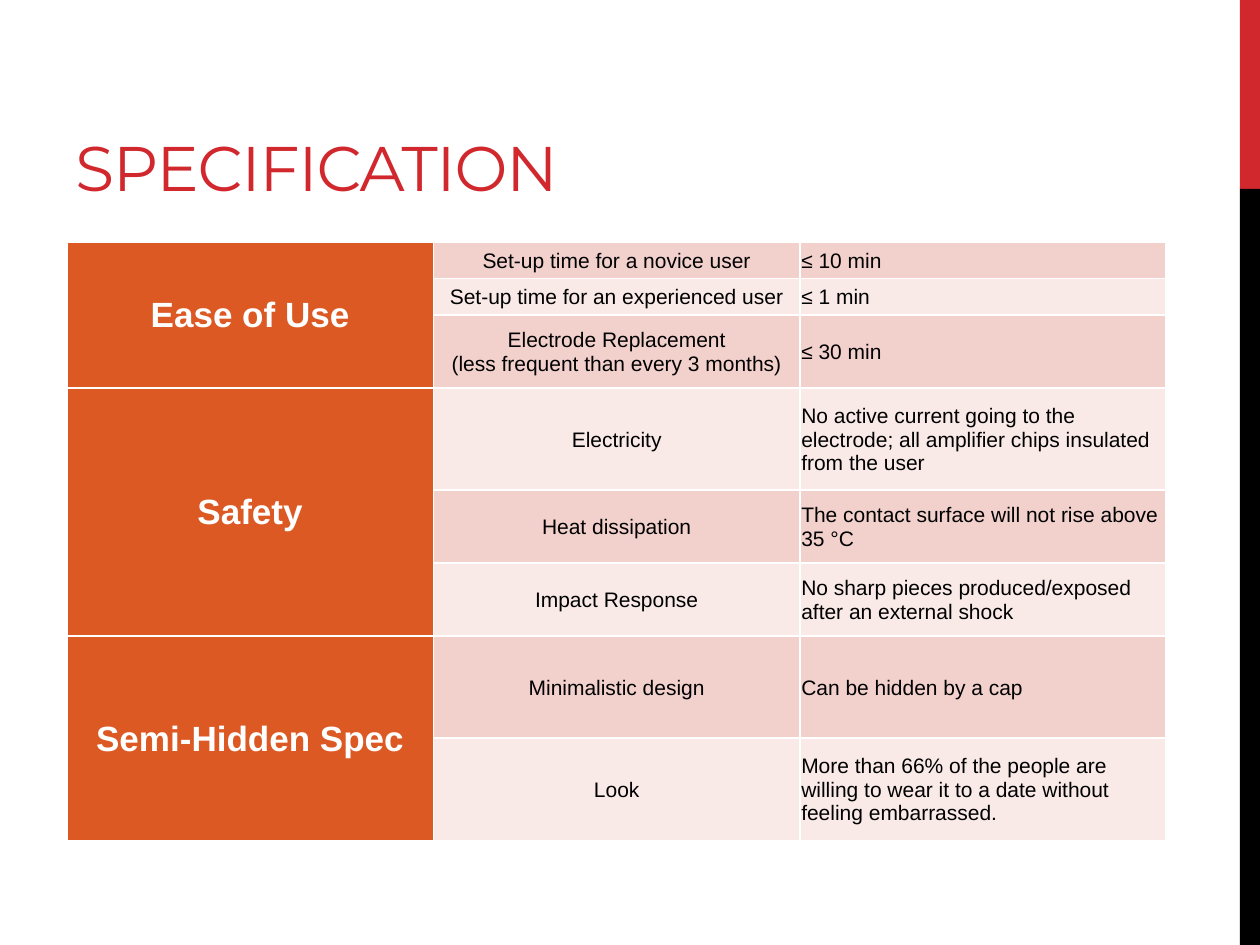
from lxml import etree
from pptx import Presentation
from pptx import util as u
from pptx.dml.color import RGBColor
from pptx.enum import shapes, text
from pptx.oxml.ns import qn

Inches = u.Inches
RED = RGBColor(0xD1, 0x28, 0x2E)
BLACK = RGBColor(0, 0, 0)
WHITE = RGBColor(0xFF, 0xFF, 0xFF)
ORANGE = RGBColor(0xDC, 0x59, 0x24)
ROSE = RGBColor(0xF2, 0xD1, 0xCD)
PALE_ROSE = RGBColor(0xF9, 0xEA, 0xE8)

SPECIFICATIONS = [
    ("Ease of Use", [
        ("Set-up time for a novice user", "≤ 10 min", 0.29),
        ("Set-up time for an experienced user", "≤ 1 min", 0.29),
        ("Electrode Replacement\n(less frequent than every 3 months)", "≤ 30 min", 0.58),
    ]),
    ("Safety", [
        ("Electricity", "No active current going to the electrode; "
         "all amplifier chips insulated from the user", 0.81),
        ("Heat dissipation", "The contact surface will not rise above 35 °C", 0.58),
        ("Impact Response", "No sharp pieces produced/exposed after an external shock", 0.58),
    ]),
    ("Semi-Hidden Spec", [
        ("Minimalistic design", "Can be hidden by a cap", 0.81),
        ("Look", "More than 66% of the people are willing to wear it "
         "to a date without feeling embarrassed.", 0.81),
    ]),
]
COLUMN_WIDTHS = (2.91, 2.91, 2.9)


def add_side_band(slide, left, top, width, height):
    accent_height = height * 0.2
    for band_top, band_height, color in (
        (top, accent_height, RED),
        (top + accent_height, height - accent_height, BLACK),
    ):
        band = slide.shapes.add_shape(
            shapes.MSO_SHAPE.RECTANGLE,
            Inches(left), Inches(band_top), Inches(width), Inches(band_height))
        band.shadow.inherit = False
        band.fill.solid()
        band.fill.fore_color.rgb = color
        band.line.fill.background()


def add_title(slide, left, top, width, height):
    title = slide.shapes.add_textbox(
        Inches(left), Inches(top), Inches(width), Inches(height)).text_frame
    title.word_wrap = True
    title.vertical_anchor = text.MSO_ANCHOR.BOTTOM
    heading = title.paragraphs[0]
    letters = heading.add_run()
    letters.text = "SPECIFICATION"
    letters._r.get_or_add_rPr().set("spc", "-60")
    heading.font.name = "Montserrat"
    heading.font.size = u.Pt(36)
    heading.font.color.rgb = RED


def add_borders(cell):
    properties = cell._tc.get_or_add_tcPr()
    for side in ("a:lnL", "a:lnR", "a:lnT", "a:lnB"):
        border = etree.SubElement(properties, qn(side), w=str(u.Pt(1)))
        fill = etree.SubElement(border, qn("a:solidFill"))
        etree.SubElement(fill, qn("a:srgbClr"), val=str(WHITE))


def fill_cell(cell, words, fill, color=BLACK, size=12, bold=False,
              alignment=text.PP_ALIGN.CENTER):
    add_borders(cell)
    cell.fill.solid()
    cell.fill.fore_color.rgb = fill
    cell.vertical_anchor = text.MSO_ANCHOR.MIDDLE
    cell.margin_left = cell.margin_right = cell.margin_top = Inches(0.01)
    cell.margin_bottom = 0
    cell.text = words
    for paragraph in cell.text_frame.paragraphs:
        paragraph.alignment = alignment
        paragraph.font.name = "Arial"
        paragraph.font.size = u.Pt(size)
        paragraph.font.bold = bold
        paragraph.font.color.rgb = color


def add_specification_table(slide, left, top, width, height):
    row_count = sum(len(items) for _, items in SPECIFICATIONS)
    table = slide.shapes.add_table(
        row_count, len(COLUMN_WIDTHS),
        Inches(left), Inches(top), Inches(width), Inches(height)).table
    table.first_row = False
    table.horz_banding = False
    for column, column_width in zip(table.columns, COLUMN_WIDTHS):
        column.width = Inches(column_width)

    row = 0
    for category, items in SPECIFICATIONS:
        first = row
        for requirement, target, row_height in items:
            table.rows[row].height = Inches(row_height)
            shade = PALE_ROSE if row % 2 else ROSE
            fill_cell(table.cell(row, 0), category if row == first else "",
                      ORANGE, WHITE, 20, True)
            fill_cell(table.cell(row, 1), requirement, shade)
            fill_cell(table.cell(row, 2), target, shade,
                      alignment=text.PP_ALIGN.LEFT)
            row += 1
        table.cell(first, 0).merge(table.cell(row - 1, 0))


def main():
    deck = Presentation()
    deck.slide_width = Inches(10)
    deck.slide_height = Inches(7.5)
    slide = deck.slides.add_slide(deck.slide_layouts[6])
    add_side_band(slide, 9.84, 0, 0.16, 7.5)
    add_title(slide, 0.5, 0.17, 6.33, 1.5)
    add_specification_table(slide, 0.53, 1.92, 8.72, 4.75)
    deck.save("out.pptx")


if __name__ == "__main__":
    main()
